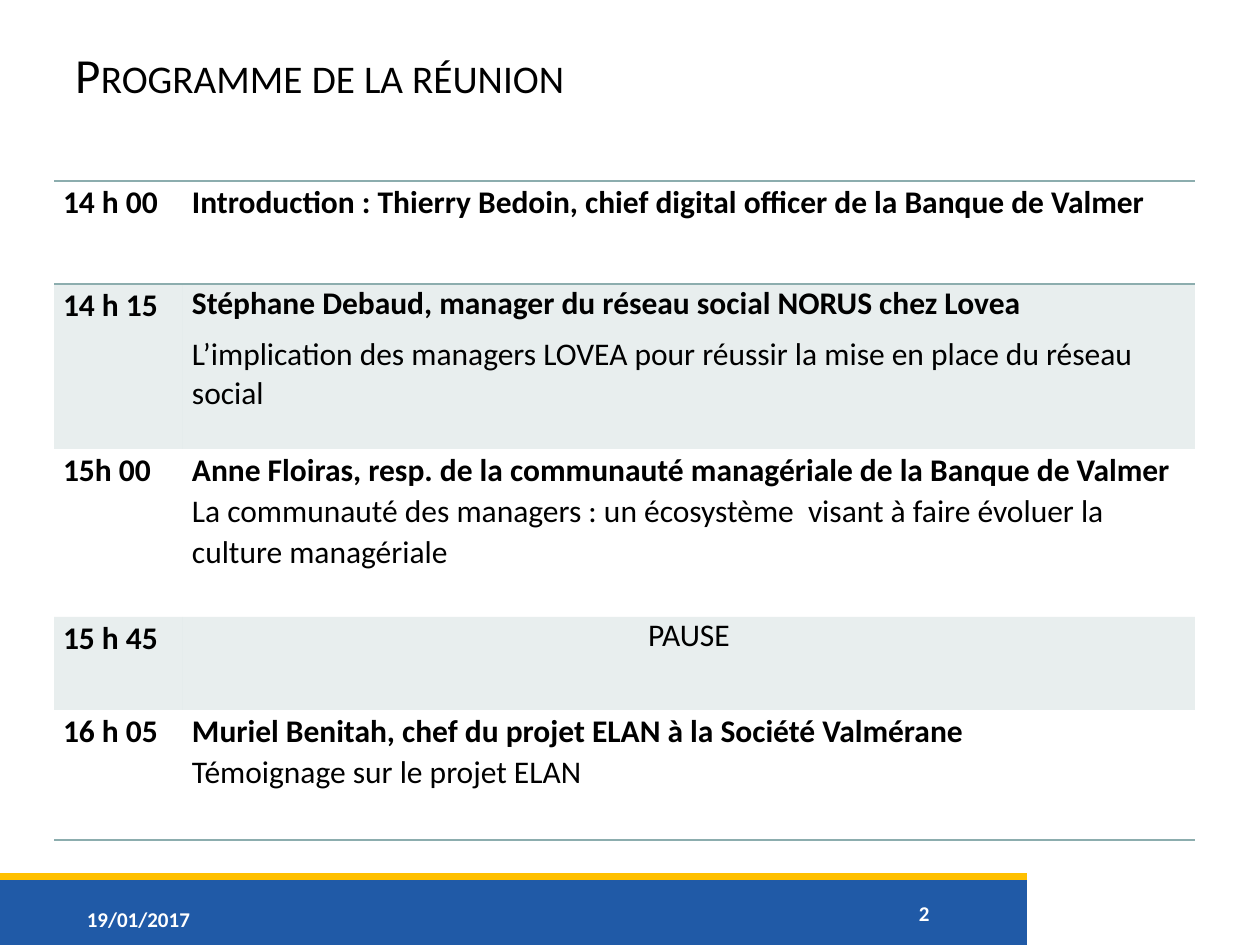
from lxml import etree
from pptx import Presentation
from pptx.dml.color import RGBColor
from pptx.enum.shapes import MSO_SHAPE
from pptx.enum.text import MSO_ANCHOR, MSO_AUTO_SIZE, PP_ALIGN
from pptx.oxml.ns import qn
from pptx.util import Emu, Pt

RECTANGLE = MSO_SHAPE.RECTANGLE
TOP, MIDDLE = MSO_ANCHOR.TOP, MSO_ANCHOR.MIDDLE
NO_AUTOFIT = MSO_AUTO_SIZE.NONE
LEFT, CENTER, RIGHT = PP_ALIGN.LEFT, PP_ALIGN.CENTER, PP_ALIGN.RIGHT

FONT = "Calibri"
BLACK, WHITE, BLUE, GOLD, SAGE = "000000", "FFFFFF", "205AA7", "FFC000", "8CADAE"
COLUMN_WIDTHS = (129, 1012)
RULED_EDGES = (0, 1, 5)

# Each line: text, bold, alignment, line spacing, space after in points
PROGRAMME = [
    (103, "14 h 00", [
        ("Introduction : Thierry Bedoin, chief digital officer de la Banque de Valmer", True, LEFT, 1.07, 0)]),
    (165, "14 h 15", [
        ("Stéphane Debaud, manager du réseau social NORUS chez Lovea", True, LEFT, 1, 7.5),
        ("L’implication des managers LOVEA pour réussir la mise en place du réseau social",
         False, LEFT, 1, 7.5)]),
    (168, "15h 00", [
        ("Anne Floiras, resp. de la communauté managériale de la Banque de Valmer", True, LEFT, 1.07, 0),
        ("La communauté des managers : un écosystème  visant à faire évoluer la culture managériale",
         False, LEFT, 1.07, 0)]),
    (93, "15 h 45", [("PAUSE", False, CENTER, 1, 7.5)]),
    (130, "16 h 05", [
        ("Muriel Benitah, chef du projet ELAN à la Société Valmérane", True, LEFT, 1.07, 0),
        ("Témoignage sur le projet ELAN", False, LEFT, 1.07, 0)]),
]


def px(length):
    """Turn pixels into EMU."""
    return Emu(round(length * 914400 / 126))


def color(code):
    """Turn a hex string into a colour."""
    return RGBColor.from_string(code)


def style(para, size, code, bold, align):
    """Format a whole paragraph."""
    para.alignment = align
    para.font.name = FONT
    para.font.size = Pt(size)
    para.font.bold = bold
    para.font.color.rgb = color(code)


def place(shape, left, top, width, height):
    """Move and size a shape."""
    shape.left, shape.top = px(left), px(top)
    shape.width, shape.height = px(width), px(height)


def add_title(page, left, top, width, height):
    """Fill the title placeholder in small capitals."""
    title = page.shapes.title
    place(title, left, top, width, height)
    frame = title.text_frame
    frame.text = "Programme de la réunion"
    frame.auto_size = NO_AUTOFIT
    frame.vertical_anchor = TOP
    para = frame.paragraphs[0]
    style(para, 28, BLACK, False, LEFT)
    para.runs[0].font._element.set("cap", "small")


def add_bar(page, left, top, width, height, code):
    """Draw a plain coloured bar."""
    bar = page.shapes.add_shape(RECTANGLE, px(left), px(top), px(width), px(height))
    bar.shadow.inherit = False
    bar.fill.solid()
    bar.fill.fore_color.rgb = color(code)
    bar.line.fill.background()


def add_label(page, left, top, width, height, text, align, anchor):
    """Write a small white footer label."""
    box = page.shapes.add_textbox(px(left), px(top), px(width), px(height))
    frame = box.text_frame
    frame.word_wrap = True
    frame.vertical_anchor = anchor
    frame.text = text
    style(frame.paragraphs[0], 12, WHITE, True, align)


def add_footer(page, left, top, width, height):
    """Draw the footer band with date and page number."""
    stripe = 7
    add_bar(page, left, top + stripe, width, height - stripe, BLUE)
    add_bar(page, left, top, width, stripe, GOLD)
    add_label(page, left + 44, top + 27, 189, 32, "19/01/2017", CENTER, TOP)
    add_label(page, left + 806, top + 19, 136, 42, "2", RIGHT, MIDDLE)


def set_borders(cell, row):
    """Rule the chosen horizontal edges and clear the others."""
    properties = cell._tc.get_or_add_tcPr()
    ruled = {"a:lnT": row in RULED_EDGES, "a:lnB": row + 1 in RULED_EDGES}
    for tag in ("a:lnL", "a:lnR", "a:lnT", "a:lnB"):
        line = etree.SubElement(properties, qn(tag), w=str(Pt(1)))
        if ruled.get(tag):
            fill = etree.SubElement(line, qn("a:solidFill"))
            etree.SubElement(fill, qn("a:srgbClr"), val=SAGE)
        else:
            etree.SubElement(line, qn("a:noFill"))


def fill_cell(cell, row, lines):
    """Write and format one programme cell."""
    cell.margin_left = cell.margin_right = px(9)
    cell.margin_top = cell.margin_bottom = 0
    set_borders(cell, row)
    if row % 2:
        cell.fill.solid()
        cell.fill.fore_color.rgb = color(SAGE)
        tint = cell._tc.tcPr.find(qn("a:solidFill")).find(qn("a:srgbClr"))
        etree.SubElement(tint, qn("a:alpha"), val="20000")
    else:
        cell.fill.background()
    cell.text = "\n".join(line[0] for line in lines)
    for para, (_, bold, align, spacing, after) in zip(cell.text_frame.paragraphs, lines):
        style(para, 18, BLACK, bold, align)
        para.line_spacing = spacing
        para.space_after = Pt(after)


def add_programme(page, left, top):
    """Build the timetable."""
    height = sum(entry[0] for entry in PROGRAMME)
    table = page.shapes.add_table(len(PROGRAMME), len(COLUMN_WIDTHS), px(left), px(top),
                                  px(sum(COLUMN_WIDTHS)), px(height)).table
    table.first_row = table.horz_banding = False
    for column, width in zip(table.columns, COLUMN_WIDTHS):
        column.width = px(width)
    for row, (height, hour, lines) in enumerate(PROGRAMME):
        table.rows[row].height = px(height)
        fill_cell(table.cell(row, 0), row, [(hour, True, LEFT, 1.07, 0)])
        fill_cell(table.cell(row, 1), row, lines)


def main():
    """Build and save the slide."""
    deck = Presentation()
    deck.slide_width, deck.slide_height = px(1260), px(945)
    page = deck.slides.add_slide(deck.slide_layouts[5])
    add_footer(page, 0, 873, 1027, 72)
    add_title(page, 63, 38, 1134, 158)
    add_programme(page, 54, 181)
    deck.save("out.pptx")


if __name__ == "__main__":
    main()
